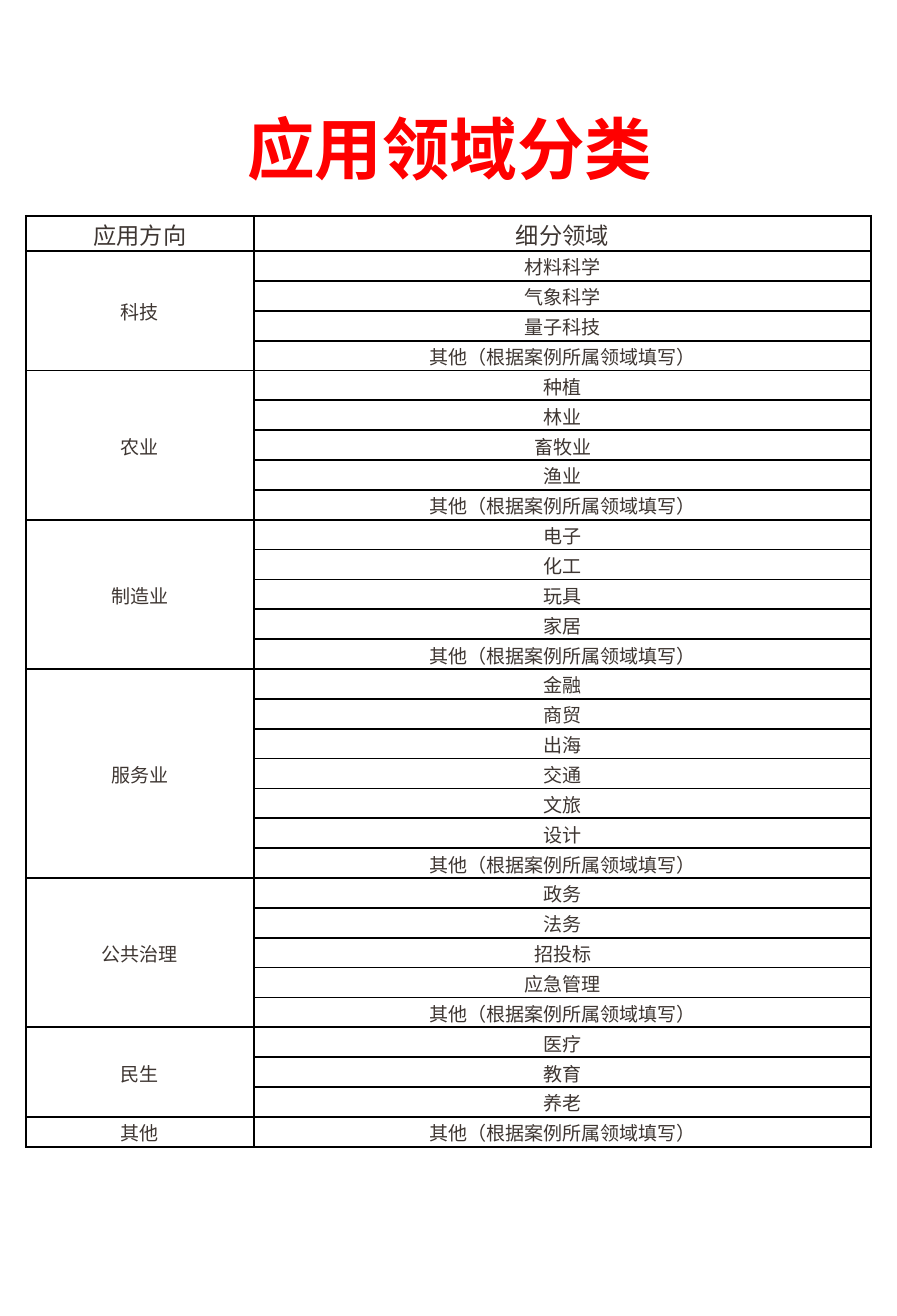
from dataclasses import dataclass

from lxml import etree
from pptx import Presentation
from pptx import util as u
from pptx.dml.color import RGBColor
from pptx.enum import text
from pptx.oxml.ns import qn


@dataclass(frozen=True)
class Theme:
    font: str = "Noto Sans CJK SC"
    title_color: str = "FF0000"
    text_color: str = "3E3632"
    border_color: str = "000000"
    title_size: int = 32
    header_size: int = 11
    body_size: int = 9
    border_width: int = 1


OTHER = "其他（根据案例所属领域填写）"
HEADERS = ("应用方向", "细分领域")
FIELDS = {
    "科技": ["材料科学", "气象科学", "量子科技", OTHER],
    "农业": ["种植", "林业", "畜牧业", "渔业", OTHER],
    "制造业": ["电子", "化工", "玩具", "家居", OTHER],
    "服务业": ["金融", "商贸", "出海", "交通", "文旅", "设计", OTHER],
    "公共治理": ["政务", "法务", "招投标", "应急管理", OTHER],
    "民生": ["医疗", "教育", "养老"],
    "其他": [OTHER],
}


class SlideBuilder:
    def __init__(self, slide, theme):
        self.slide = slide
        self.theme = theme

    def style_paragraph(self, paragraph, size, color, bold=False):
        paragraph.alignment = text.PP_ALIGN.CENTER
        font = paragraph.font
        font.name = self.theme.font
        font.size = u.Pt(size)
        font.bold = bold
        font.color.rgb = RGBColor.from_string(color)
        properties = paragraph._p.pPr.find(qn("a:defRPr"))
        east_asian = etree.SubElement(properties, qn("a:ea"))
        east_asian.set("typeface", self.theme.font)

    def add_title(self, wording, left, top, width, height):
        title = self.slide.shapes.title
        title.left, title.top = u.Inches(left), u.Inches(top)
        title.width, title.height = u.Inches(width), u.Inches(height)
        frame = title.text_frame
        frame.text = wording
        frame.auto_size = text.MSO_AUTO_SIZE.NONE
        frame.vertical_anchor = text.MSO_ANCHOR.MIDDLE
        paragraph = frame.paragraphs[0]
        paragraph.line_spacing = u.Pt(24)
        self.style_paragraph(paragraph, self.theme.title_size,
                             self.theme.title_color, bold=True)

    def add_borders(self, cell):
        properties = cell._tc.get_or_add_tcPr()
        for index, side in enumerate(("lnL", "lnR", "lnT", "lnB")):
            line = etree.Element(qn(f"a:{side}"))
            line.set("w", str(u.Pt(self.theme.border_width)))
            fill = etree.SubElement(line, qn("a:solidFill"))
            color = etree.SubElement(fill, qn("a:srgbClr"))
            color.set("val", self.theme.border_color)
            properties.insert(index, line)

    def style_cell(self, cell, size):
        cell.fill.background()
        cell.vertical_anchor = text.MSO_ANCHOR.MIDDLE
        cell.margin_left = cell.margin_right = cell.margin_top = u.Inches(0.01)
        cell.margin_bottom = 0
        self.style_paragraph(cell.text_frame.paragraphs[0], size,
                             self.theme.text_color)
        self.add_borders(cell)

    def add_grouped_table(self, headers, groups, left, top, column_widths,
                          header_height, height):
        """Add a table whose first column spans the rows of each group."""
        body_rows = sum(len(items) for items in groups.values())
        table = self.slide.shapes.add_table(
            body_rows + 1, len(headers), u.Inches(left), u.Inches(top),
            u.Inches(sum(column_widths)), u.Inches(height)).table
        table.first_row = table.horz_banding = False
        for column, width in zip(table.columns, column_widths):
            column.width = u.Inches(width)
        row_height = (height - header_height) / body_rows
        for index, row in enumerate(table.rows):
            row.height = u.Inches(row_height if index else header_height)

        for column, header in enumerate(headers):
            table.cell(0, column).text = header
        first = 1
        for group, items in groups.items():
            table.cell(first, 0).text = group
            for row, item in enumerate(items, first):
                table.cell(row, 1).text = item
            last = first + len(items) - 1
            if last > first:
                table.cell(first, 0).merge(table.cell(last, 0))
            first = last + 1

        for index, row in enumerate(table.rows):
            size = self.theme.body_size if index else self.theme.header_size
            for cell in row.cells:
                self.style_cell(cell, size)


def main():
    presentation = Presentation()
    presentation.slide_width = u.Inches(5.9)
    presentation.slide_height = u.Inches(8.66)
    title_only = presentation.slide_layouts[5]
    builder = SlideBuilder(presentation.slides.add_slide(title_only), Theme())
    builder.add_title("应用领域分类", 0.3, 0.35, 5.32, 1.44)
    builder.add_grouped_table(HEADERS, FIELDS, left=0.17, top=1.42,
                              column_widths=(1.5, 4.06),
                              header_height=0.23, height=6.13)
    presentation.save("out.pptx")


if __name__ == "__main__":
    main()
